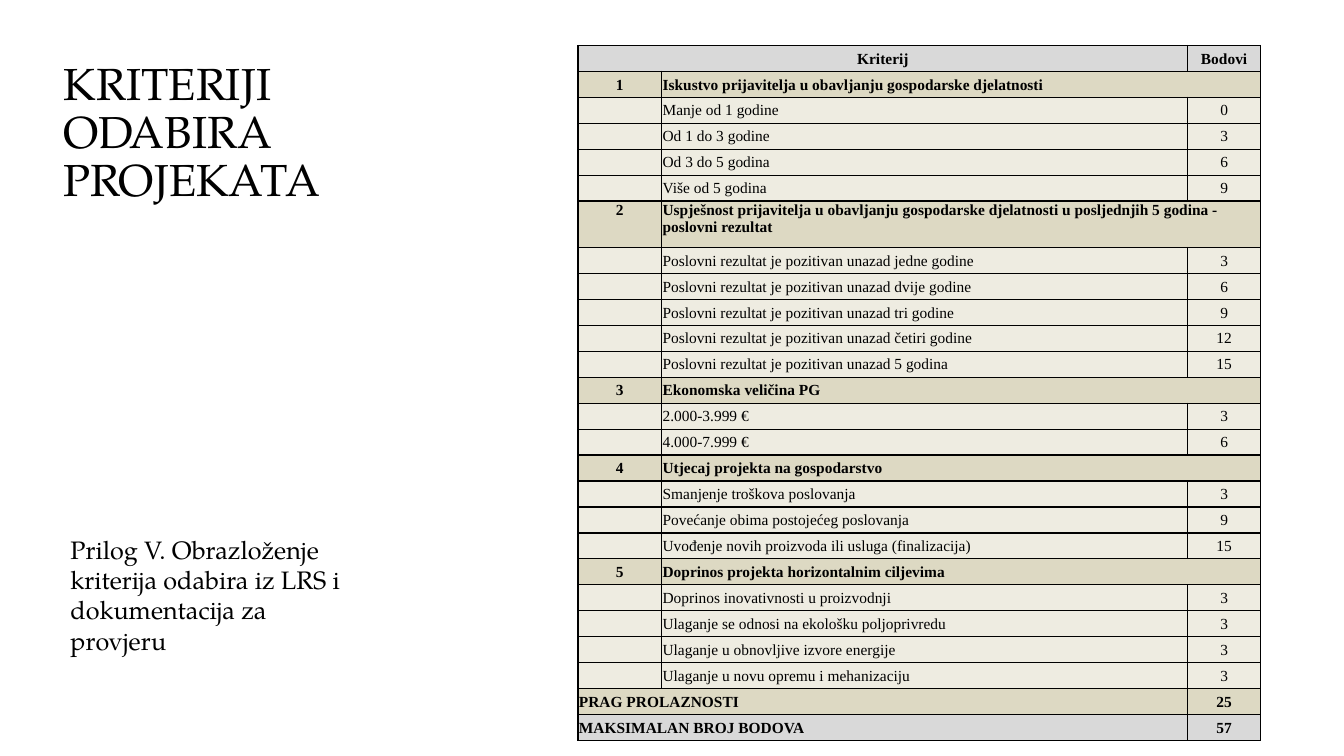
from lxml.etree import SubElement
from pptx import Presentation
from pptx.dml.color import RGBColor
from pptx.enum.text import MSO_ANCHOR, PP_ALIGN
from pptx.oxml.ns import qn
from pptx.util import Inches, Pt

WIDTH, HEIGHT = Inches(13.33), Inches(7.5)
COLORS = {"ink": "000000", "frame": "D9D9D9", "section": "DDD9C3", "option": "EEECE1"}
HEADING_FONT = {"name": "TeX Gyre Pagella", "size": Pt(32)}
NOTE_FONT = {"name": "TeX Gyre Pagella", "size": Pt(18)}
TABLE_FONT = {"name": "Times New Roman", "size": Pt(11)}
CELL_MARGINS = {"margin_left": Inches(0.01), "margin_right": Inches(0.01),
                "margin_top": Inches(0.01), "margin_bottom": 0}
COLUMNS = (0.83, 5.22, 0.72)
TABLE_HEIGHT, TALL_ROW = 6.9, 0.46
TALL_SECTION = "2"

SECTIONS = [
    ("Iskustvo prijavitelja u obavljanju gospodarske djelatnosti", [
        ("Manje od 1 godine", 0),
        ("Od 1 do 3 godine", 3),
        ("Od 3 do 5 godina", 6),
        ("Više od 5 godina", 9)]),
    ("Uspješnost prijavitelja u obavljanju gospodarske djelatnosti "
     "u posljednjih 5 godina - poslovni rezultat", [
        ("Poslovni rezultat je pozitivan unazad jedne godine", 3),
        ("Poslovni rezultat je pozitivan unazad dvije godine", 6),
        ("Poslovni rezultat je pozitivan unazad tri godine", 9),
        ("Poslovni rezultat je pozitivan unazad četiri godine", 12),
        ("Poslovni rezultat je pozitivan unazad 5 godina", 15)]),
    ("Ekonomska veličina PG", [
        ("2.000-3.999 €", 3),
        ("4.000-7.999 €", 6)]),
    ("Utjecaj projekta na gospodarstvo", [
        ("Smanjenje troškova poslovanja", 3),
        ("Povećanje obima postojećeg poslovanja", 9),
        ("Uvođenje novih proizvoda ili usluga (finalizacija)", 15)]),
    ("Doprinos projekta horizontalnim ciljevima", [
        ("Doprinos inovativnosti u proizvodnji", 3),
        ("Ulaganje se odnosi na ekološku poljoprivredu", 3),
        ("Ulaganje u obnovljive izvore energije", 3),
        ("Ulaganje u novu opremu i mehanizaciju", 3)]),
]


def set_values(target, values):
    """Set every named attribute of the target."""
    for name, value in values.items():
        setattr(target, name, value)


def write(paragraph, text, font):
    """Add one run of text in the given font."""
    span = paragraph.add_run()
    span.text = text
    set_values(span.font, font)
    span.font.color.rgb = RGBColor.from_string(COLORS["ink"])


def add_text(page, text, area, font, anchor=MSO_ANCHOR.TOP, spacing=1.0):
    """Place a wrapping text box; area is given in shares of the slide."""
    left, top, width, height = area
    box = page.shapes.add_textbox(int(left * WIDTH), int(top * HEIGHT),
                                  int(width * WIDTH), int(height * HEIGHT))
    set_values(box.text_frame, {"word_wrap": True, "vertical_anchor": anchor})
    paragraph = box.text_frame.paragraphs[0]
    paragraph.line_spacing = spacing
    write(paragraph, text, font)


def add_borders(cell):
    """Draw a thin line on all four sides of a cell."""
    properties = cell._tc.get_or_add_tcPr()
    for side in ("a:lnL", "a:lnR", "a:lnT", "a:lnB"):
        line = SubElement(properties, qn(side), w=str(Pt(1)))
        fill = SubElement(line, qn("a:solidFill"))
        SubElement(fill, qn("a:srgbClr"), val=COLORS["ink"])


def fill_cell(cell, text, color, bold, align, anchor):
    """Format one cell and write its text."""
    add_borders(cell)
    set_values(cell, {**CELL_MARGINS, "vertical_anchor": anchor})
    cell.fill.solid()
    cell.fill.fore_color.rgb = RGBColor.from_string(COLORS[color])
    paragraph = cell.text_frame.paragraphs[0]
    paragraph.alignment = align
    if text:
        write(paragraph, text, {**TABLE_FONT, "bold": bold})
    else:
        ending = paragraph._p.get_or_add_endParaRPr()
        ending.set("sz", str(int(TABLE_FONT["size"].pt * 100)))


def criteria_rows():
    """List the rows as texts, fill colour and first merged column."""
    rows = [(("Kriterij", "", "Bodovi"), "frame", 0)]
    for number, (title, options) in enumerate(SECTIONS, 1):
        rows.append(((str(number), title, ""), "section", 1))
        rows += [(("", label, str(points)), "option", None) for label, points in options]
    rows.append((("PRAG PROLAZNOSTI", "", "25"), "section", 0))
    rows.append((("MAKSIMALAN BROJ BODOVA", "", "57"), "frame", 0))
    return rows


def add_criteria(page, left, top):
    """Build the table of criteria and points at a share of the slide."""
    rows = criteria_rows()
    table = page.shapes.add_table(
        len(rows), len(COLUMNS), int(left * WIDTH), int(top * HEIGHT),
        Inches(sum(COLUMNS)), Inches(TABLE_HEIGHT)).table
    set_values(table, {"first_row": False, "horz_banding": False})
    for column, width in zip(table.columns, COLUMNS):
        column.width = Inches(width)
    row_height = (TABLE_HEIGHT - TALL_ROW) / (len(rows) - 1)
    for index, (texts, color, merged) in enumerate(rows):
        tall = texts[0] == TALL_SECTION
        table.rows[index].height = Inches(TALL_ROW if tall else row_height)
        anchor = MSO_ANCHOR.TOP if tall else MSO_ANCHOR.MIDDLE
        for position, text in enumerate(texts):
            centered = position == 2 or text.isdigit() or index == 0
            fill_cell(table.cell(index, position), text, color, color != "option",
                      PP_ALIGN.CENTER if centered else PP_ALIGN.LEFT, anchor)
        if merged is not None:
            table.cell(index, merged).merge(table.cell(index, merged + 1))


def main():
    """Build and save the slide."""
    deck = Presentation()
    set_values(deck, {"slide_width": WIDTH, "slide_height": HEIGHT})
    page = deck.slides.add_slide(deck.slide_layouts[6])
    add_text(page, "KRITERIJI ODABIRA PROJEKATA", (0.04, 0, 0.27, 0.28),
             HEADING_FONT, MSO_ANCHOR.BOTTOM, 0.9)
    add_criteria(page, 0.43, 0.06)
    add_text(page, "Prilog V. Obrazloženje kriterija odabira iz LRS i dokumentacija za provjeru",
             (0.045, 0.7, 0.23, 0.17), NOTE_FONT)
    deck.save("out.pptx")


if __name__ == "__main__":
    main()
